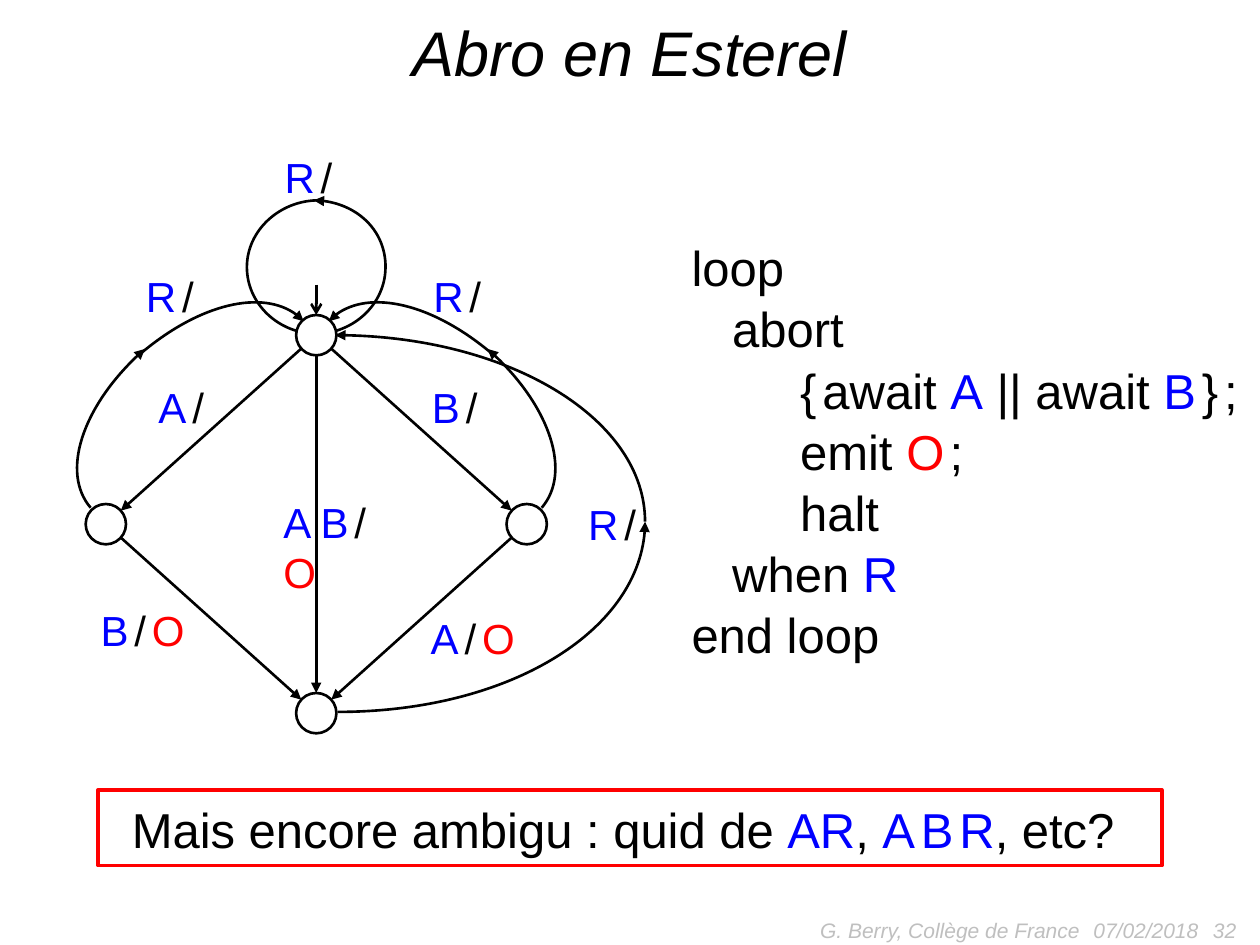
from math import hypot

from lxml import etree
from pptx import Presentation
from pptx.dml.color import RGBColor
from pptx.enum.shapes import MSO_CONNECTOR, MSO_SHAPE
from pptx.enum.text import MSO_ANCHOR, MSO_AUTO_SIZE, PP_ALIGN
from pptx.oxml.ns import qn
from pptx.util import Inches, Pt

OVAL, RECT, STRAIGHT = MSO_SHAPE.OVAL, MSO_SHAPE.RECTANGLE, MSO_CONNECTOR.STRAIGHT
TOP, MIDDLE, BOTTOM = MSO_ANCHOR.TOP, MSO_ANCHOR.MIDDLE, MSO_ANCHOR.BOTTOM
LEFT, CENTER, RIGHT = PP_ALIGN.LEFT, PP_ALIGN.CENTER, PP_ALIGN.RIGHT
GROW = MSO_AUTO_SIZE.SHAPE_TO_FIT_TEXT

COLORS = {"black": "000000", "white": "FFFFFF", "blue": "0000FF",
          "red": "FF0000", "gray": "BFBFBF"}
COLS, ROWS = 10, 7.5
RADIUS = 0.16
AXIS = 2.51


class Slide:
    font = "Arial"
    line_width = 1.5

    def __init__(self, prs):
        self.s = prs.slides.add_slide(prs.slide_layouts[6])
        self.col = prs.slide_width / COLS
        self.row = prs.slide_height / ROWS

    def place(self, *lengths):
        return [round(v * (self.row if i % 2 else self.col)) for i, v in enumerate(lengths)]

    def color(self, name):
        return RGBColor.from_string(COLORS[name])

    def outline(self, sp, color="black", width=line_width, arrow=None):
        sp.line.color.rgb = self.color(color)
        sp.line.width = Pt(width)
        if arrow:
            ln = sp.line._get_or_add_ln()
            etree.SubElement(ln, qn("a:tailEnd"), type=arrow)

    def fill_text(self, tf, lines, size, align=LEFT, spacing=None, hanging=0, italic=False):
        for i, line in enumerate(lines):
            p = tf.paragraphs[0] if i == 0 else tf.add_paragraph()
            for name, value in {"alignment": align, "line_spacing": spacing}.items():
                setattr(p, name, value)
            if hanging:
                pPr = p._p.get_or_add_pPr()
                pPr.set("marL", str(Inches(hanging)))
                pPr.set("indent", str(-Inches(hanging)))
            for text, color, *small in line:
                r = p.add_run()
                r.text = text
                fmt = {"name": self.font, "size": Pt(small[0] if small else size),
                       "italic": italic}
                for name, value in fmt.items():
                    setattr(r.font, name, value)
                r.font.color.rgb = self.color(color)

    def text(self, box, lines, size, anchor=TOP, wrap=True, grow=False, **style):
        tf = self.s.shapes.add_textbox(*self.place(*box)).text_frame
        tf.word_wrap = wrap
        tf.vertical_anchor = anchor
        if grow:
            tf.auto_size = GROW
        self.fill_text(tf, lines, size, **style)

    def shape(self, kind, box, fill=None, color="black", width=line_width):
        sp = self.s.shapes.add_shape(kind, *self.place(*box))
        sp.shadow.inherit = False
        if fill:
            sp.fill.solid()
            sp.fill.fore_color.rgb = self.color(fill)
        else:
            sp.fill.background()
        self.outline(sp, color, width)
        return sp

    def node(self, x, y):
        self.shape(OVAL, (x - RADIUS, y - RADIUS, 2 * RADIUS, 2 * RADIUS), "white")

    def arrow(self, start, end, head="triangle"):
        sp = self.s.shapes.add_connector(STRAIGHT, *self.place(*start, *end))
        self.outline(sp, arrow=head)
        etree.SubElement(sp._element.spPr, qn("a:effectLst"))

    def edge(self, start, end):
        dx, dy = end[0] - start[0], end[1] - start[1]
        k = RADIUS / hypot(dx, dy)
        self.arrow((start[0] + k * dx, start[1] + k * dy),
                   (end[0] - k * dx, end[1] - k * dy))

    def curve(self, points, head=None):
        start, *rest = [self.place(*pt) for pt in points]
        builder = self.s.shapes.build_freeform(*start)
        builder.add_line_segments(rest, close=False)
        sp = builder.convert_to_shape()
        steps = list(sp._element.iter(qn("a:lnTo")))
        bezier = etree.SubElement(steps[0].getparent(), qn("a:cubicBezTo"))
        for step in steps:
            bezier.append(step[0])
            step.getparent().remove(step)
        sp.shadow.inherit = False
        sp.fill.background()
        self.outline(sp, arrow=head)


def mirror(points):
    return [(2 * AXIS - x, y) for x, y in points]


def main():
    prs = Presentation()
    prs.slide_width, prs.slide_height = Inches(COLS), Inches(ROWS)
    slide = Slide(prs)

    slide.text((0.25, 0.05, 9.5, 0.71), [[("Abro en Esterel", "black")]], 36,
               anchor=BOTTOM, align=CENTER, italic=True)

    footers = [(5.5, 3.17, "G. Berry, Collège de France", RIGHT),
               (8.58, 1.3, "07/02/2018", LEFT), (7.58, 2.33, "32", RIGHT)]
    for x, width, text, align in footers:
        slide.text((x, 7.18, width, 0.4), [[(text, "gray")]], 12,
                   anchor=MIDDLE, align=align, italic=True)

    gap = (" ", "blue", 12)
    a, b, reset = ("A", "blue"), ("B", "blue"), ("R", "blue")
    out, slash = ("O", "red"), ("/", "black")
    code = [
        [("loop", "black")],
        [("   abort", "black")],
        [("        {", "black"), gap, ("await ", "black"), a, (" || await ", "black"), b,
         gap, ("}", "black"), gap, (";", "black")],
        [("        emit ", "black"), out, (" ", "blue", 11), (";", "black")],
        [("        halt", "black")],
        [("   when ", "black"), reset],
        [("end loop", "black")],
    ]
    slide.text((5.39, 1.82, 4.66, 3.4), code, 28, spacing=1.04, hanging=0.22)

    start, end = (AXIS, 2.66), (AXIS, 5.66)
    left, right = (0.84, 4.16), (4.18, 4.16)
    for pair in [(start, left), (start, right), (right, end), (left, end), (start, end)]:
        slide.edge(*pair)

    loop_low = [(2.5, 2.65), (2.81, 2.65), (3.06, 2.41), (3.06, 2.12)]
    loop_high = [(3.06, 2.12), (3.06, 1.83), (2.8, 1.59), (2.49, 1.59)]
    back_low = [(0.72, 4.03), (0.48, 3.75), (0.67, 3.19), (1.15, 2.77)]
    back_high = [(1.1, 2.82), (1.59, 2.4), (2.17, 2.28), (2.41, 2.55)]
    slide.curve(loop_low)
    slide.curve(loop_high, "triangle")
    for points in (loop_low, loop_high):
        slide.curve(mirror(points))
    for points in (back_low, back_high):
        slide.curve(points, "triangle")
        slide.curve(mirror(points), "triangle")
    slide.curve([(2.68, 5.65), (4.03, 5.65), (5.12, 4.98), (5.12, 4.14)], "triangle")
    slide.curve([(5.12, 4.14), (5.12, 3.33), (4.02, 2.66), (2.66, 2.66)], "triangle")

    slide.arrow((AXIS, 2.26), (AXIS, 2.5), "arrow")
    for center in (start, left, right, end):
        slide.node(*center)

    silent, emits = [gap, slash], [gap, slash, gap, out]
    labels = [(1.16, 2.98, 0.56, [a] + silent), (3.33, 2.98, 0.56, [b] + silent),
              (3.32, 4.81, 0.87, [a] + emits), (0.7, 4.75, 0.87, [b] + emits),
              (2.15, 3.89, 1.16, [("A B", "blue")] + emits)]
    labels += [(x, y, 0.58, [reset] + silent)
               for x, y in [(2.16, 1.15), (1.06, 2.1), (3.34, 2.1), (4.57, 3.91)]]
    for x, y, width, runs in labels:
        slide.text((x, y, width, 0.5), [runs], 24, wrap=False, grow=True)

    sp = slide.shape(RECT, (0.78, 6.27, 8.44, 0.6), color="red", width=2.25)
    tf = sp.text_frame
    tf.word_wrap = False
    tf.vertical_anchor = MIDDLE
    question = [("Mais encore ambigu : quid de ", "black"), ("AR", "blue"), (", ", "black"),
                a, gap, b, gap, reset, (", etc? ", "black")]
    slide.fill_text(tf, [question], 28, align=CENTER, spacing=1.05)

    prs.save("out.pptx")


if __name__ == "__main__":
    main()
